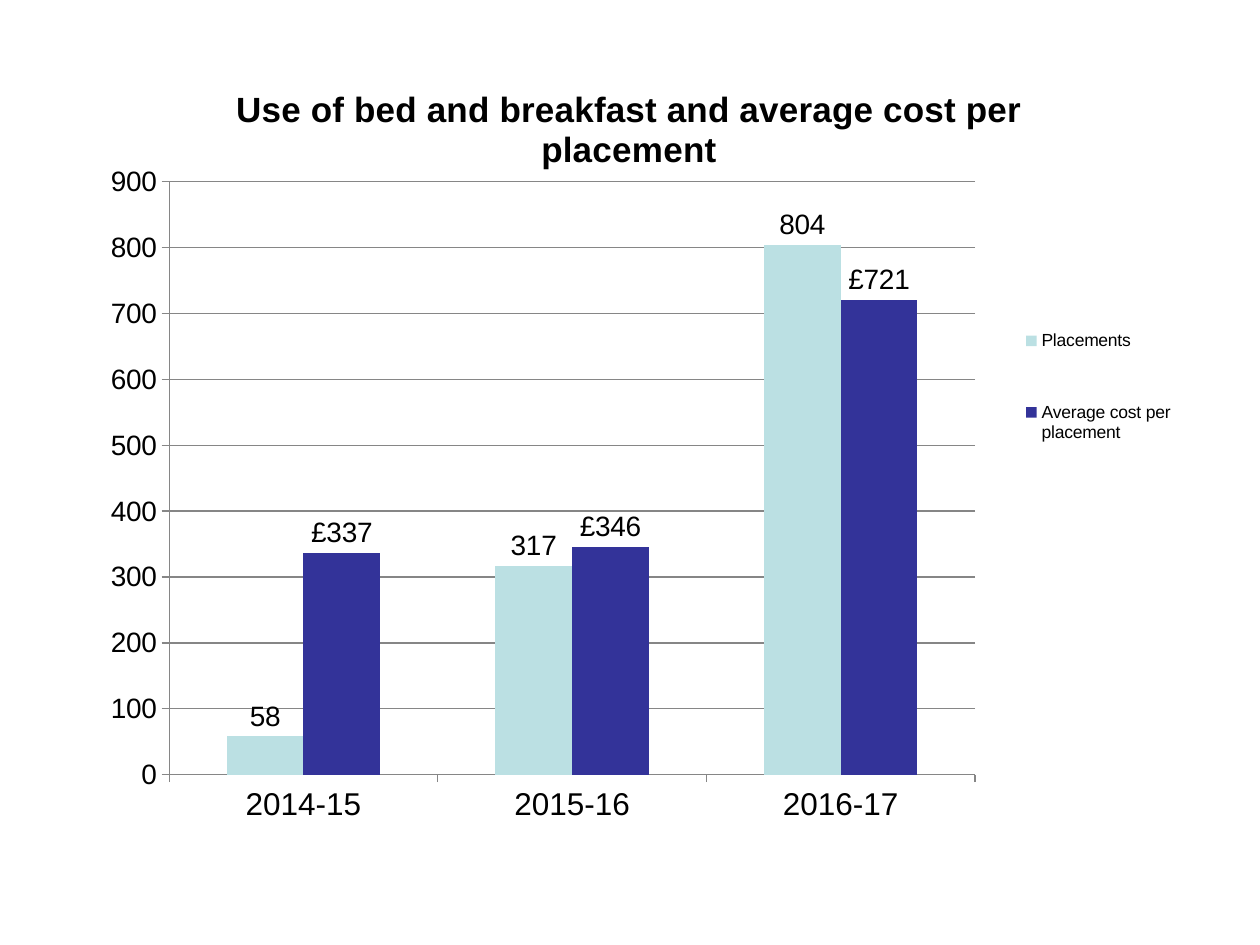
import dataclasses
import typing

import pptx
import pptx.chart.data
import pptx.dml.color
import pptx.enum.chart
import pptx.oxml
import pptx.oxml.ns
import pptx.util

EMU_PER_PX = 914400 / 126


@dataclasses.dataclass(frozen=True)
class Theme:
    font: str = "Arial"
    text: str = "000000"
    rule: str = "868686"
    title_size: int = 20
    category_size: int = 18
    value_size: int = 16
    legend_size: int = 10


@dataclasses.dataclass(frozen=True)
class Series:
    name: str
    values: tuple[int, ...]
    color: str
    number_format: str


class Area(typing.NamedTuple):
    """Fractions of the chart's own width and height."""
    x: float
    y: float
    w: float | None = None
    h: float | None = None


THEME = Theme()
TITLE = "Use of bed and breakfast and average cost per placement"
YEARS = ("2014-15", "2015-16", "2016-17")
SERIES = (
    Series("Placements", (58, 317, 804), "BBE0E3", "0"),
    Series("Average cost per placement", (337, 346, 721), "333399", '"£"#,##0'),
)


def px(length: int) -> pptx.util.Emu:
    return pptx.util.Emu(round(length * EMU_PER_PX))


def rgb(color: str) -> pptx.dml.color.RGBColor:
    return pptx.dml.color.RGBColor.from_string(color)


def style_font(font: typing.Any, size: int, bold: bool = False) -> None:
    font.name = THEME.font
    font.size = pptx.util.Pt(size)
    font.bold = bold
    font.color.rgb = rgb(THEME.text)


def style_line(line: typing.Any) -> None:
    line.color.rgb = rgb(THEME.rule)
    line.width = pptx.util.Pt(0.75)


def place(element: typing.Any, index: int, area: Area, inner: bool = False) -> None:
    """Give a chart part a manual layout as its child number index."""
    for old in element.findall(pptx.oxml.ns.qn("c:layout")):
        element.remove(old)
    target = '<c:layoutTarget val="inner"/>' if inner else ""
    modes = '<c:xMode val="edge"/><c:yMode val="edge"/>'
    sizes = "".join(f'<c:{name} val="{value}"/>'
                    for name, value in area._asdict().items() if value is not None)
    element.insert(index, pptx.oxml.parse_xml(
        f'<c:layout {pptx.oxml.ns.nsdecls("c")}><c:manualLayout>'
        f"{target}{modes}{sizes}</c:manualLayout></c:layout>"))


def style_axis(axis: typing.Any, size: int) -> None:
    axis.major_tick_mark = pptx.enum.chart.XL_TICK_MARK.OUTSIDE
    axis.minor_tick_mark = pptx.enum.chart.XL_TICK_MARK.NONE
    style_font(axis.tick_labels.font, size)
    style_line(axis.format.line)


def style_series(bars: typing.Any, series: Series) -> None:
    bars.format.fill.solid()
    bars.format.fill.fore_color.rgb = rgb(series.color)
    bars.invert_if_negative = False
    labels = bars.data_labels
    labels.show_value = True
    labels.number_format = series.number_format
    labels.number_format_is_linked = False
    labels.position = pptx.enum.chart.XL_LABEL_POSITION.OUTSIDE_END
    style_font(labels.font, THEME.value_size)


def add_cost_chart(page: typing.Any) -> None:
    data = pptx.chart.data.CategoryChartData()
    data.categories = YEARS
    for series in SERIES:
        data.add_series(series.name, series.values)
    chart = page.shapes.add_chart(
        pptx.enum.chart.XL_CHART_TYPE.COLUMN_CLUSTERED,
        px(84), px(65), px(1121), px(794), data).chart
    style_font(chart.font, THEME.legend_size)

    # Title
    chart.has_title = True
    frame = chart.chart_title.text_frame
    frame.text = TITLE
    style_font(frame.paragraphs[0].runs[0].font, THEME.title_size, bold=True)
    place(chart.chart_title._element, 1, Area(0.13, 0.02))

    # Columns
    plot = chart.plots[0]
    plot.gap_width = 150
    plot.overlap = 0
    plot.vary_by_categories = False
    for bars, series in zip(plot.series, SERIES):
        style_series(bars, series)
    place(plot._element.getparent(), 0, Area(0.076, 0.147, 0.719, 0.747), inner=True)

    # Axes
    style_axis(chart.category_axis, THEME.category_size)
    axis = chart.value_axis
    style_axis(axis, THEME.value_size)
    axis.minimum_scale, axis.maximum_scale, axis.major_unit = 0, 900, 100
    axis.tick_labels.number_format = "0"
    axis.tick_labels.number_format_is_linked = False
    axis.has_major_gridlines = True
    style_line(axis.major_gridlines.format.line)

    # Legend
    chart.has_legend = True
    chart.legend.position = pptx.enum.chart.XL_LEGEND_POSITION.RIGHT
    chart.legend.include_in_layout = False
    style_font(chart.legend.font, THEME.legend_size)
    place(chart.legend._element, 1, Area(0.82, 0.27, 0.17, 0.27))


def main() -> None:
    deck = pptx.Presentation()
    deck.slide_width, deck.slide_height = px(1260), px(945)
    page = deck.slides.add_slide(deck.slide_layouts[6])
    add_cost_chart(page)
    deck.save("out.pptx")


if __name__ == "__main__":
    main()
